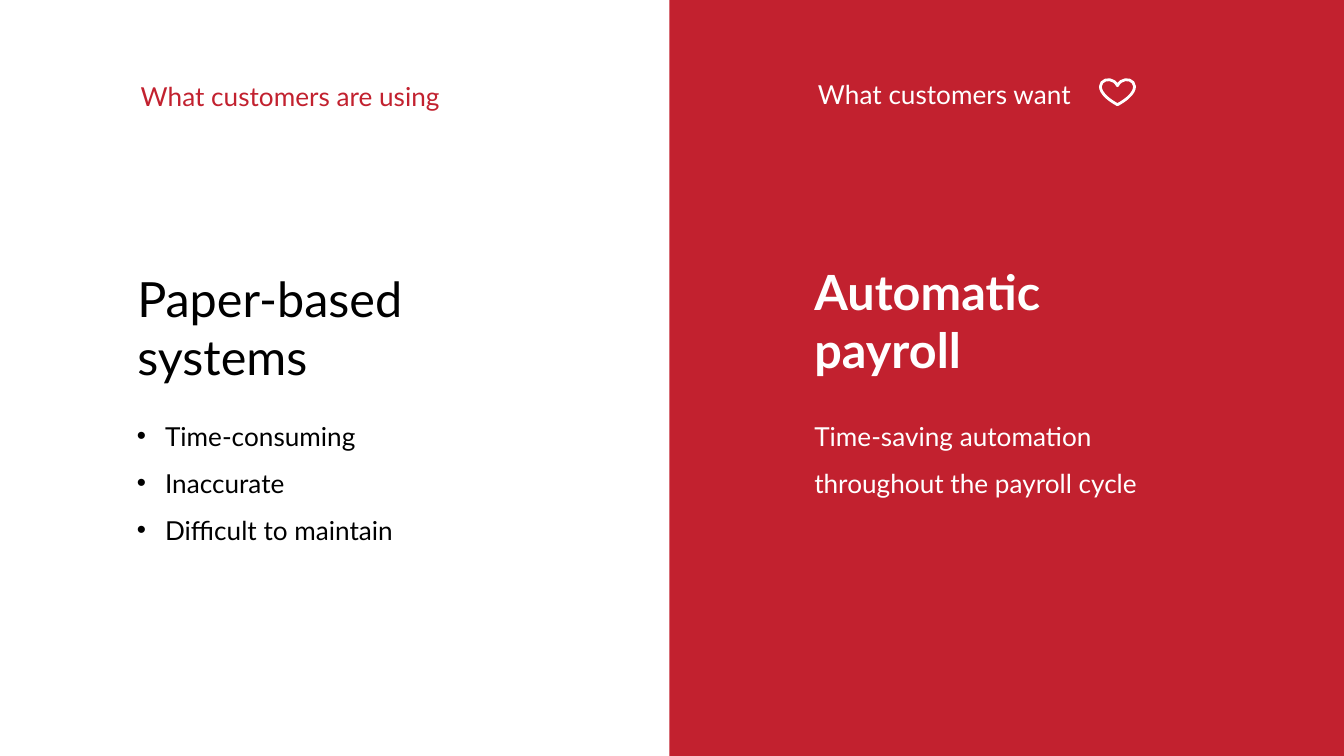
"""Build a two-panel slide comparing paper-based systems with automatic payroll."""
from dataclasses import dataclass

from lxml import etree
from pptx import Presentation
from pptx.dml.color import RGBColor
from pptx.enum.shapes import MSO_SHAPE
from pptx.enum.text import MSO_ANCHOR, MSO_AUTO_SIZE, PP_ALIGN
from pptx.oxml.ns import qn
from pptx.util import Cm, Pt

RECTANGLE, HEART = MSO_SHAPE.RECTANGLE, MSO_SHAPE.HEART
TOP, LEFT, NO_FIT = MSO_ANCHOR.TOP, PP_ALIGN.LEFT, MSO_AUTO_SIZE.NONE
TITLE_ONLY = 5


@dataclass(frozen=True)
class Theme:
    font: str = "Lato"
    red: RGBColor = RGBColor(0xC2, 0x21, 0x2F)
    white: RGBColor = RGBColor(0xFF, 0xFF, 0xFF)
    black: RGBColor = RGBColor(0, 0, 0)
    heading_size: Pt = Pt(26)
    body_size: Pt = Pt(14)
    outline: Pt = Pt(1.5)
    body_spacing: float = 1.5
    bullet_indent: Cm = Cm(0.53)


class SlideBuilder:
    def __init__(self, slide, theme):
        self.slide = slide
        self.theme = theme

    def title(self, text, box, color):
        self._write(self.slide.shapes.title, text, box, color, self.theme.heading_size)

    def text(self, text, box, color, size=None, bold=False, spacing=1.0):
        shape = self.slide.shapes.add_textbox(0, 0, 0, 0)
        self._write(shape, text, box, color, size or self.theme.body_size, bold, spacing)
        return shape

    def bullets(self, items, box, color):
        shape = self.text("\n".join(items), box, color, spacing=self.theme.body_spacing)
        for paragraph in shape.text_frame.paragraphs:
            properties = paragraph._p.get_or_add_pPr()
            properties.set("marL", str(self.theme.bullet_indent))
            properties.set("indent", str(-self.theme.bullet_indent))
            bullet_color = etree.SubElement(properties, qn("a:buClr"))
            etree.SubElement(bullet_color, qn("a:srgbClr"), val=str(color))
            etree.SubElement(properties, qn("a:buFont"), typeface="Arial")
            etree.SubElement(properties, qn("a:buChar"), char="•")

    def panel(self, box, color):
        shape = self._shape(RECTANGLE, box)
        shape.fill.solid()
        shape.fill.fore_color.rgb = color
        shape.line.fill.background()

    def outline(self, kind, box, color):
        shape = self._shape(kind, box)
        shape.fill.background()
        shape.line.color.rgb = color
        shape.line.width = self.theme.outline

    def _shape(self, kind, box):
        shape = self.slide.shapes.add_shape(kind, *map(Cm, box))
        shape.shadow.inherit = False
        return shape

    def _write(self, shape, text, box, color, size, bold=False, spacing=1.0):
        shape.left, shape.top, shape.width, shape.height = map(Cm, box)
        frame = shape.text_frame
        frame.text = text
        frame.word_wrap = True
        frame.auto_size = NO_FIT
        frame.vertical_anchor = TOP
        for paragraph in frame.paragraphs:
            paragraph.alignment = LEFT
            paragraph.line_spacing = spacing
            for run in paragraph.runs:
                run.font.name = self.theme.font
                run.font.size = size
                run.font.bold = bold
                run.font.color.rgb = color


def main():
    theme = Theme()
    presentation = Presentation()
    presentation.slide_width, presentation.slide_height = Cm(25.4), Cm(14.29)
    slide = presentation.slides.add_slide(presentation.slide_layouts[TITLE_ONLY])
    builder = SlideBuilder(slide, theme)

    builder.panel((12.65, 0, 12.75, 14.29), theme.red)

    builder.text("What customers are using", (2.41, 1.4, 8.1, 0.89), theme.red)
    builder.title("Paper-based systems", (2.34, 4.95, 8.1, 2.57), theme.black)
    builder.bullets(["Time-consuming", "Inaccurate", "Difficult to maintain"],
                    (2.34, 7.52, 6.78, 3.99), theme.black)

    builder.text("What customers want", (15.21, 1.35, 7.62, 1.02), theme.white)
    builder.outline(HEART, (20.8, 1.5, 0.64, 0.48), theme.white)
    builder.text("Automatic payroll", (15.14, 4.83, 7.62, 2.51), theme.white,
                 theme.heading_size, bold=True)
    builder.text("Time-saving automation throughout the payroll cycle",
                 (15.14, 7.52, 6.99, 3.99), theme.white, spacing=theme.body_spacing)

    presentation.save("out.pptx")


if __name__ == "__main__":
    main()
